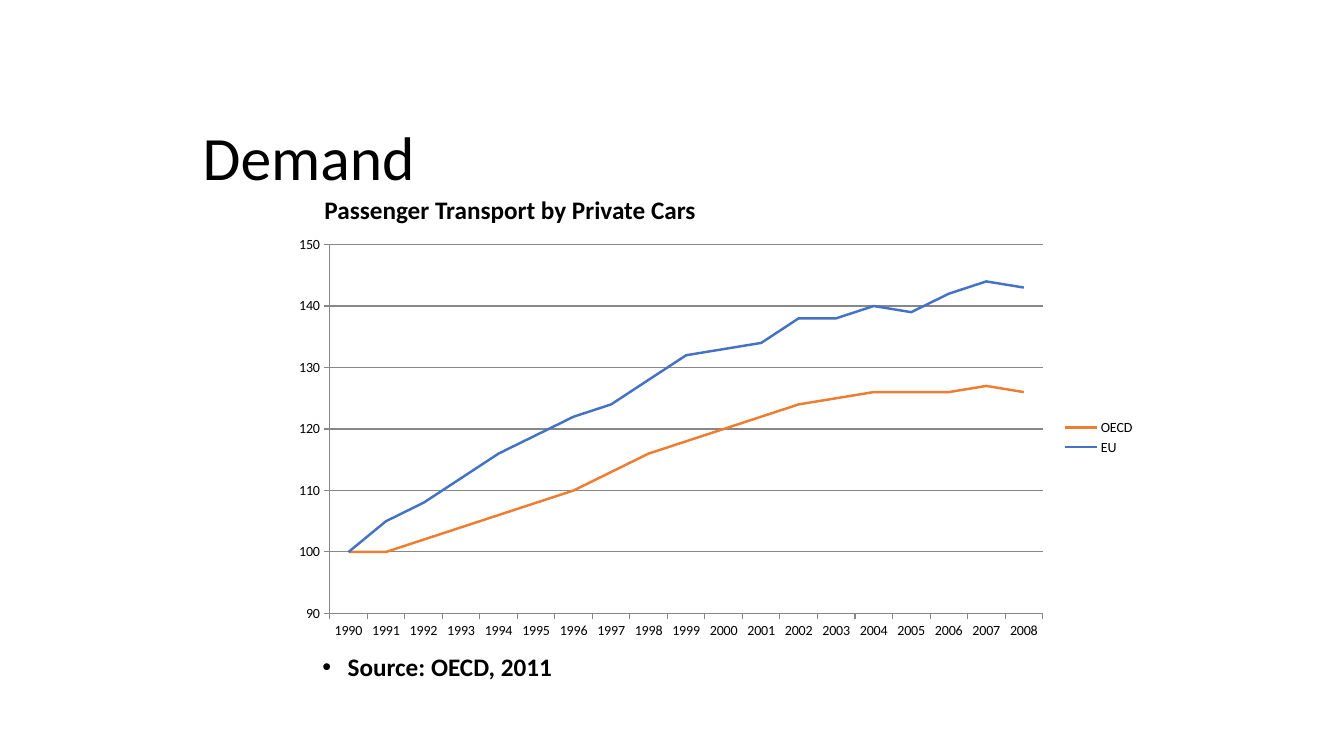
"""Build the slide on demand for passenger transport by private cars."""
import pptx
import pptx.chart.data
import pptx.dml.color
import pptx.enum.chart
import pptx.enum.text
import pptx.oxml
import pptx.oxml.ns
import pptx.util
from pptx.util import Inches, Pt

BLACK = pptx.dml.color.RGBColor(0x00, 0x00, 0x00)
GRAY = pptx.dml.color.RGBColor(0x87, 0x87, 0x87)
ORANGE = pptx.dml.color.RGBColor(0xED, 0x7D, 0x31)
BLUE = pptx.dml.color.RGBColor(0x44, 0x72, 0xC4)
FONT = "Calibri"

TITLE = "Demand"
HEADING = "Passenger Transport by Private Cars"
SOURCE = "Source: OECD, 2011"
YEARS = [str(year) for year in range(1990, 2009)]
TRANSPORT = [
    ("OECD", ORANGE, (100, 100, 102, 104, 106, 108, 110, 113, 116, 118,
                      120, 122, 124, 125, 126, 126, 126, 127, 126)),
    ("EU", BLUE, (100, 105, 108, 112, 116, 119, 122, 124, 128, 132,
                  133, 134, 138, 138, 140, 139, 142, 144, 143)),
]
PLOT_AREA = {"x": 0.055, "y": 0.04, "w": 0.826, "h": 0.88}


def style_font(font, size, bold=False):
    """Apply the slide's typeface, size and colour."""
    font.name = FONT
    font.size = Pt(size)
    font.bold = bold
    font.color.rgb = BLACK


def add_caption(slide, text, left, top):
    """Add a bold one-line caption and return its paragraph."""
    frame = slide.shapes.add_textbox(
        Inches(left), Inches(top), Inches(7.87), Inches(0.4)).text_frame
    frame.word_wrap = True
    caption = frame.paragraphs[0]
    caption.text = text
    style_font(caption.runs[0].font, 18, True)
    return caption


def add_bullet(paragraph):
    """Give a paragraph a hanging round bullet."""
    properties = paragraph._p.get_or_add_pPr()
    properties.set("marL", str(Inches(0.25)))
    properties.set("indent", str(-Inches(0.25)))
    namespace = pptx.oxml.ns.nsdecls("a")
    properties.append(pptx.oxml.parse_xml(f'<a:buFont {namespace} typeface="Arial"/>'))
    properties.append(pptx.oxml.parse_xml(f'<a:buChar {namespace} char="•"/>'))


def place_plot(chart):
    """Fix the inner plot area inside the chart frame."""
    plot_area = chart._chartSpace.chart.plotArea
    for layout in plot_area.findall(pptx.oxml.ns.qn("c:layout")):
        plot_area.remove(layout)
    modes = "".join(f'<c:{side}Mode val="edge"/>' for side in "xy")
    sizes = "".join(f'<c:{side} val="{share}"/>' for side, share in PLOT_AREA.items())
    plot_area.insert(0, pptx.oxml.parse_xml(
        f'<c:layout {pptx.oxml.ns.nsdecls("c")}><c:manualLayout>'
        f'<c:layoutTarget val="inner"/>{modes}{sizes}'
        '</c:manualLayout></c:layout>'))


def add_transport_chart(slide):
    """Add the line chart of transport by year."""
    data = pptx.chart.data.CategoryChartData()
    data.categories = YEARS
    for name, _, values in TRANSPORT:
        data.add_series(name, values)
    chart = slide.shapes.add_chart(
        pptx.enum.chart.XL_CHART_TYPE.LINE, Inches(2.8), Inches(2.26),
        Inches(8.56), Inches(4.16), data).chart
    style_font(chart.font, 18)
    chart.has_title = False
    chart.has_legend = True
    chart.legend.position = pptx.enum.chart.XL_LEGEND_POSITION.RIGHT
    chart.legend.include_in_layout = False
    style_font(chart.legend.font, 10)

    for axis in (chart.category_axis, chart.value_axis):
        axis.major_tick_mark = pptx.enum.chart.XL_TICK_MARK.OUTSIDE
        axis.minor_tick_mark = pptx.enum.chart.XL_TICK_MARK.NONE
        axis.format.line.color.rgb = GRAY
        axis.format.line.width = Pt(0.75)
        style_font(axis.tick_labels.font, 10)
    index_axis = chart.value_axis
    index_axis.minimum_scale = 90
    index_axis.maximum_scale = 150
    index_axis.major_unit = 10
    index_axis.has_major_gridlines = True
    index_axis.major_gridlines.format.line.color.rgb = GRAY
    index_axis.major_gridlines.format.line.width = Pt(0.75)

    chart.plots[0].vary_by_categories = False
    for region, (_, color, _) in zip(chart.plots[0].series, TRANSPORT):
        region.smooth = False
        region.marker.style = pptx.enum.chart.XL_MARKER_STYLE.NONE
        region.format.line.color.rgb = color
        region.format.line.width = Pt(1.75)
    place_plot(chart)


def main():
    """Lay out the slide and save it."""
    deck = pptx.Presentation()
    deck.slide_width = Inches(13.33)
    deck.slide_height = Inches(7.5)
    slide = deck.slides.add_slide(deck.slide_layouts[5])

    title = slide.shapes.title
    title.left, title.top = Inches(1.91), Inches(1.35)
    title.width, title.height = Inches(10.5), Inches(0.48)
    title.text_frame.text = TITLE
    title.text_frame.auto_size = pptx.enum.text.MSO_AUTO_SIZE.NONE
    title.text_frame.vertical_anchor = pptx.enum.text.MSO_ANCHOR.MIDDLE
    heading = title.text_frame.paragraphs[0]
    heading.alignment = pptx.enum.text.PP_ALIGN.LEFT
    heading.line_spacing = 0.9
    style_font(heading.runs[0].font, 44)

    add_caption(slide, HEADING, 3.12, 1.88)
    add_transport_chart(slide)
    source = add_caption(slide, SOURCE, 3.1, 6.45)
    add_bullet(source)
    source.line_spacing = 0.9

    deck.save("out.pptx")


if __name__ == "__main__":
    main()
